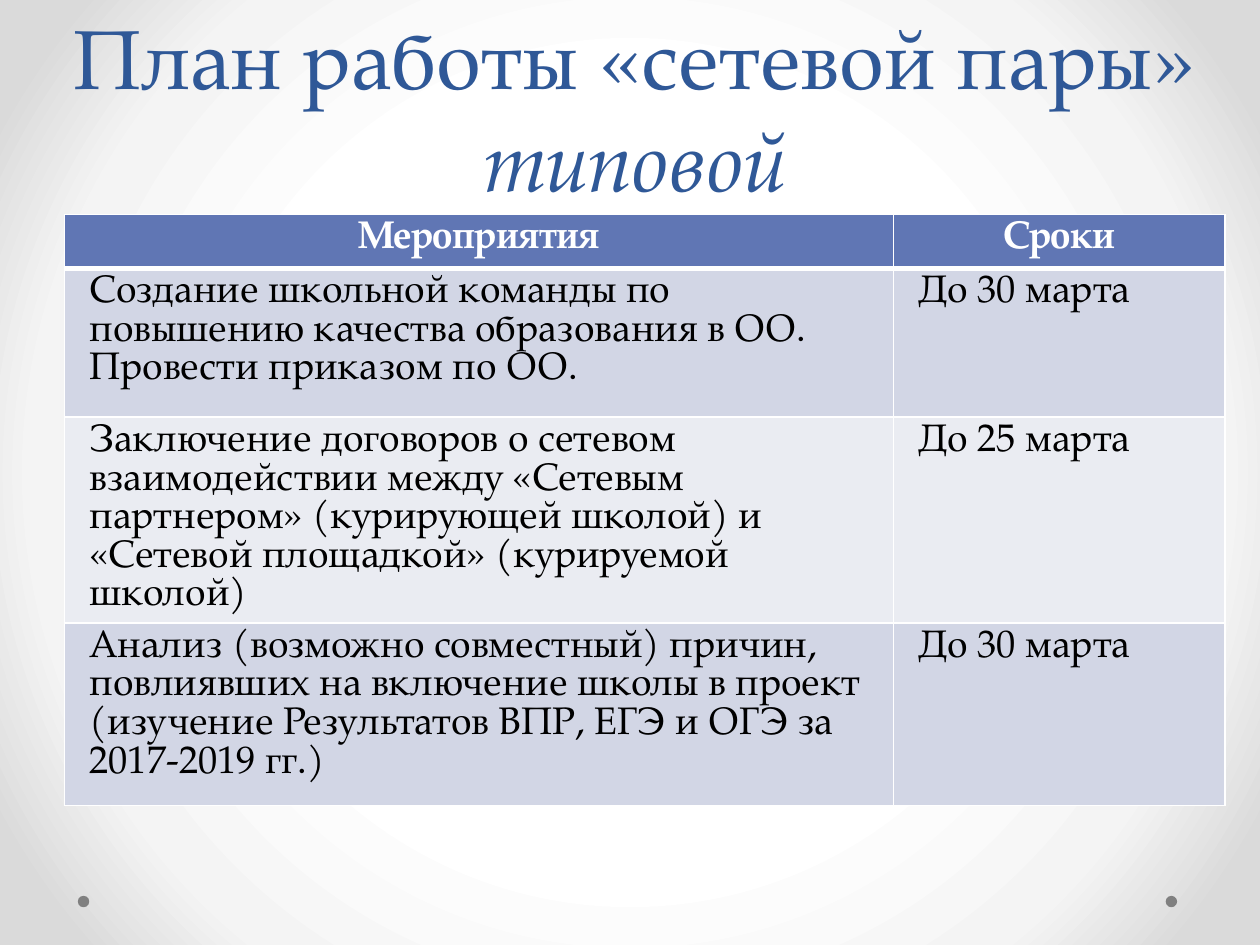
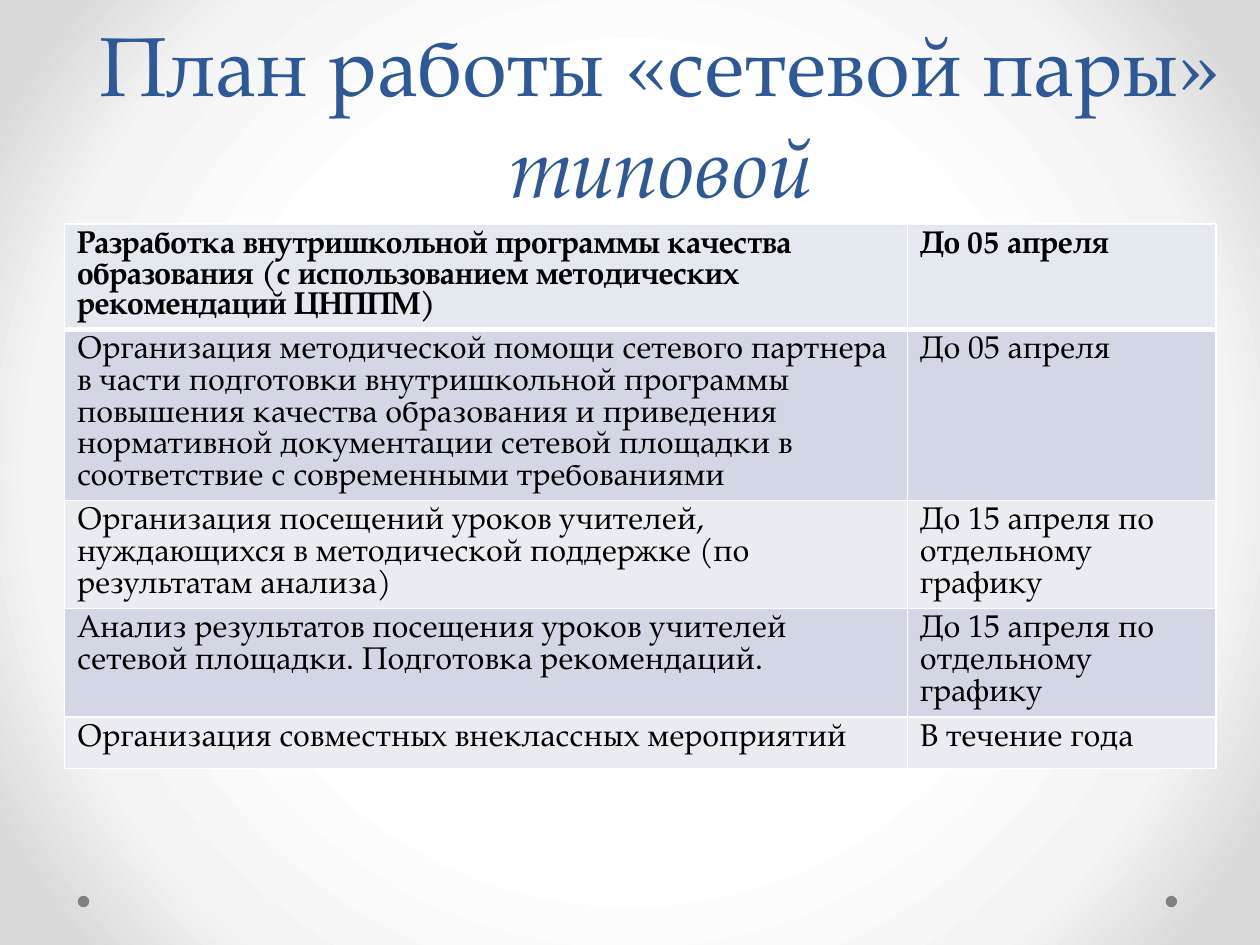
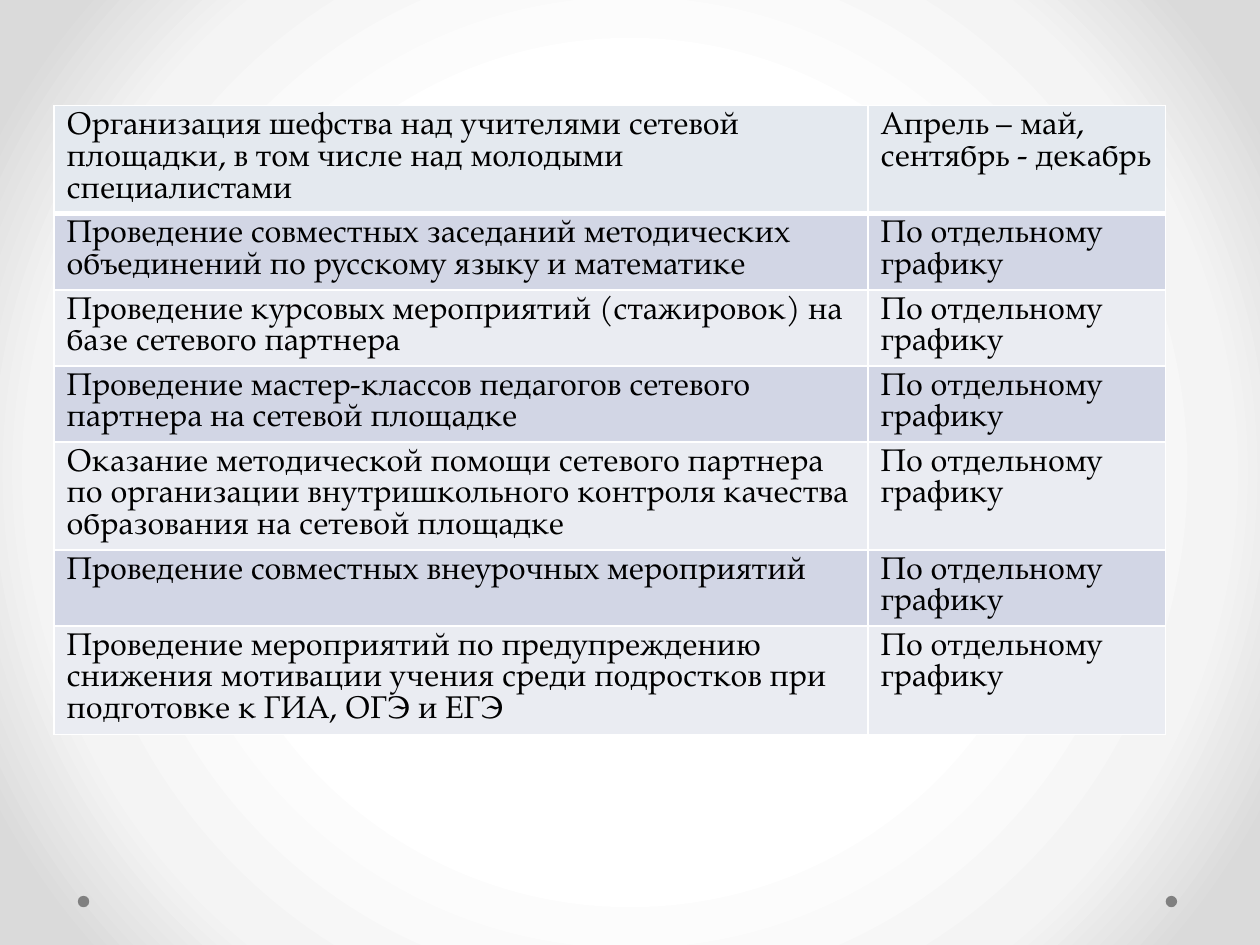
from dataclasses import dataclass
from typing import Any, Optional

import pptx
import pptx.dml.color
import pptx.enum.shapes
import pptx.enum.text
import pptx.oxml
import pptx.oxml.ns
import pptx.util

Cm = pptx.util.Cm
Pt = pptx.util.Pt
ALIGN = pptx.enum.text.PP_ALIGN

FONT = "TeX Gyre Pagella"
COLORS = {
    "title": "2F5897", "text": "000000", "white": "FFFFFF", "dot": "808080",
    "header": "6076B4", "pale header": "E4E9EF",
    "dark band": "D2D6E5", "light band": "EAECF2",
    "middle": "F4F4F4", "edge": "DADADA",
}
BACKGROUND_STOPS = ((50, "white"), (76, "middle"), (92, "edge"))
DOT_LEFTS, DOT_TOP, DOT_SIZE = (23.5, 1.57), 18.06, 0.23
TITLE_LINES = ("План работы «сетевой пары»", "типовой")
ON_SCHEDULE = "По отдельному графику"
APRIL_SCHEDULE = "До 15 апреля по отдельному графику"
TWO_LINES, THREE_LINES = 1.53, 2.18


@dataclass(frozen=True)
class Box:
    left: float
    top: float
    width: float
    height: float

    def lengths(self) -> tuple:
        return tuple(Cm(value) for value in (self.left, self.top, self.width, self.height))


@dataclass(frozen=True)
class Row:
    height: float
    activity: str
    deadline: str


@dataclass(frozen=True)
class PlanSlide:
    title_box: Optional[Box]
    left: float
    top: float
    columns: tuple[float, float]
    rows: tuple[Row, ...]
    size: int = 18
    indent: float = 0
    header_fill: str = "pale header"
    header_color: str = "text"
    header_bold: bool = False
    header_align: Any = ALIGN.LEFT


PLAN_SLIDES = (
    PlanSlide(
        Box(0.89, 0, 23.8, 4.32), 1.3, 4.32, (16.71, 6.68),
        (
            Row(1.09, "Мероприятия", "Сроки"),
            Row(3, "Создание школьной команды по повышению качества образования в ОО.\n"
                   "Провести приказом по ОО.", "До 30 марта"),
            Row(4.14, "Заключение договоров о сетевом взаимодействии между «Сетевым партнером» "
                      "(курирующей школой) и «Сетевой площадкой» (курируемой школой)",
                "До 25 марта"),
            Row(3.68, "Анализ (возможно совместный) причин, повлиявших на включение школы в проект "
                      "(изучение Результатов ВПР, ЕГЭ и ОГЭ за 2017-2019 гг.)", "До 30 марта"),
        ),
        size=22, indent=0.25, header_fill="header", header_color="white",
        header_bold=True, header_align=ALIGN.CENTER,
    ),
    PlanSlide(
        Box(1.5, 2.34, 23.62, 2.11), 1.3, 4.52, (16.99, 6.22),
        (
            Row(2.11, "Разработка внутришкольной программы качества образования "
                      "(с использованием методических рекомендаций ЦНППМ)", "До 05 апреля"),
            Row(3.45, "Организация методической помощи сетевого партнера в части подготовки "
                      "внутришкольной программы повышения качества образования и приведения "
                      "нормативной документации сетевой площадки в соответствие с современными "
                      "требованиями", "До 05 апреля"),
            Row(THREE_LINES, "Организация посещений уроков учителей, нуждающихся в методической "
                             "поддержке (по результатам анализа)", APRIL_SCHEDULE),
            Row(THREE_LINES, "Анализ результатов посещения уроков учителей сетевой площадки. "
                             "Подготовка рекомендаций.", APRIL_SCHEDULE),
            Row(1.04, "Организация совместных внеклассных мероприятий", "В течение года"),
        ),
        header_bold=True,
    ),
    PlanSlide(
        None, 1.09, 2.13, (16.41, 5.99),
        (
            Row(THREE_LINES, "Организация шефства над учителями сетевой площадки, в том числе "
                             "над молодыми специалистами", "Апрель – май,\nсентябрь - декабрь"),
            Row(TWO_LINES, "Проведение совместных заседаний методических объединений по русскому "
                           "языку и математике", ON_SCHEDULE),
            Row(TWO_LINES, "Проведение курсовых мероприятий (стажировок) на базе сетевого партнера",
                ON_SCHEDULE),
            Row(TWO_LINES, "Проведение мастер-классов педагогов сетевого партнера на сетевой "
                           "площадке", ON_SCHEDULE),
            Row(THREE_LINES, "Оказание методической помощи сетевого партнера по организации "
                             "внутришкольного контроля качества образования на сетевой площадке",
                ON_SCHEDULE),
            Row(TWO_LINES, "Проведение совместных внеурочных мероприятий", ON_SCHEDULE),
            Row(THREE_LINES, "Проведение мероприятий по предупреждению снижения мотивации учения "
                             "среди подростков при подготовке к ГИА, ОГЭ и ЕГЭ", ON_SCHEDULE),
        ),
    ),
)


def rgb(name: str) -> pptx.dml.color.RGBColor:
    return pptx.dml.color.RGBColor.from_string(COLORS[name])


def apply_format(target: Any, values: dict[str, Any]) -> None:
    for name, value in values.items():
        setattr(target, name, value)


def format_font(font: Any, size: int, color: str, **values: Any) -> None:
    apply_format(font, {"name": FONT, "size": Pt(size), **values})
    font.color.rgb = rgb(color)


def set_background(master: Any) -> None:
    """Give the master a radial gradient that darkens towards the corners."""
    master.background.fill.solid()
    solid_fill = master.element.xpath("p:cSld/p:bg/p:bgPr/a:solidFill")[0]
    stops = "".join(
        f'<a:gs pos="{position * 1000}"><a:srgbClr val="{COLORS[color]}"/></a:gs>'
        for position, color in BACKGROUND_STOPS
    )
    gradient = pptx.oxml.parse_xml(
        f'<a:gradFill {pptx.oxml.ns.nsdecls("a")} rotWithShape="1"><a:gsLst>{stops}</a:gsLst>'
        '<a:path path="circle"><a:fillToRect l="50000" t="50000" r="50000" b="50000"/></a:path>'
        "</a:gradFill>"
    )
    solid_fill.getparent().replace(solid_fill, gradient)


def move_dots_to_master(slide: Any, master: Any) -> None:
    """Draw the footer dots on a slide and hand them to the master, which all slides share."""
    for number, left in enumerate(DOT_LEFTS):
        dot = slide.shapes.add_shape(
            pptx.enum.shapes.MSO_SHAPE.OVAL, *Box(left, DOT_TOP, DOT_SIZE, DOT_SIZE).lengths()
        )
        dot.shadow.inherit = False
        dot.fill.solid()
        dot.fill.fore_color.rgb = rgb("dot")
        dot.line.fill.background()
        dot.element.nvSpPr.cNvPr.set("id", str(100 + number))
        master.element.cSld.spTree.append(dot.element)


def add_title(slide: Any, box: Box) -> None:
    title = slide.shapes.title
    apply_format(title, dict(zip(("left", "top", "width", "height"), box.lengths())))
    apply_format(title.text_frame, {
        "word_wrap": True,
        "auto_size": pptx.enum.text.MSO_AUTO_SIZE.NONE,
        "vertical_anchor": pptx.enum.text.MSO_ANCHOR.BOTTOM,
    })
    paragraph = title.text_frame.paragraphs[0]
    apply_format(paragraph, {"alignment": ALIGN.CENTER, "line_spacing": Pt(58)})
    for index, line in enumerate(TITLE_LINES):
        if index:
            paragraph.add_line_break()
        run = paragraph.add_run()
        run.text = line
        format_font(run.font, 48, "title", italic=index > 0)


def set_borders(cell: Any, row_index: int) -> None:
    """Draw white borders, with a thick one under the header row."""
    widths = {"L": 1, "R": 1, "T": 3 if row_index == 1 else 1, "B": 3 if row_index == 0 else 1}
    properties = cell._tc.get_or_add_tcPr()
    for side, width in widths.items():
        properties.append(pptx.oxml.parse_xml(
            f'<a:ln{side} {pptx.oxml.ns.nsdecls("a")} w="{Pt(width)}"><a:solidFill>'
            f'<a:srgbClr val="{COLORS["white"]}"/></a:solidFill></a:ln{side}>'
        ))


def fill_cell(cell: Any, text: str, row_index: int, plan: PlanSlide) -> None:
    is_header = row_index == 0
    band = "dark band" if row_index % 2 else "light band"
    set_borders(cell, row_index)
    cell.fill.solid()
    cell.fill.fore_color.rgb = rgb(plan.header_fill if is_header else band)
    cell.text_frame.text = text
    for paragraph in cell.text_frame.paragraphs:
        paragraph.alignment = plan.header_align if is_header else ALIGN.LEFT
        if plan.indent and not is_header:
            apply_indent = paragraph._p.get_or_add_pPr()
            apply_indent.set("marL", str(Cm(plan.indent)))
        for run in paragraph.runs:
            format_font(run.font, plan.size, plan.header_color if is_header else "text",
                        bold=is_header and plan.header_bold)


def add_plan_table(slide: Any, plan: PlanSlide) -> None:
    box = Box(plan.left, plan.top, sum(plan.columns), sum(row.height for row in plan.rows))
    table = slide.shapes.add_table(len(plan.rows), len(plan.columns), *box.lengths()).table
    table.horz_banding = False
    for column, width in zip(table.columns, plan.columns):
        column.width = Cm(width)
    for row_index, row in enumerate(plan.rows):
        table.rows[row_index].height = Cm(row.height)
        for column_index, text in enumerate((row.activity, row.deadline)):
            fill_cell(table.cell(row_index, column_index), text, row_index, plan)


def main() -> None:
    presentation = pptx.Presentation()
    apply_format(presentation, {"slide_width": Cm(25.4), "slide_height": Cm(19.05)})
    master = presentation.slide_master
    set_background(master)
    for plan in PLAN_SLIDES:
        layout_name = "Title Only" if plan.title_box else "Blank"
        slide = presentation.slides.add_slide(presentation.slide_layouts.get_by_name(layout_name))
        if plan.title_box:
            add_title(slide, plan.title_box)
        add_plan_table(slide, plan)
    move_dots_to_master(presentation.slides[0], master)
    presentation.save("out.pptx")


if __name__ == "__main__":
    main()
